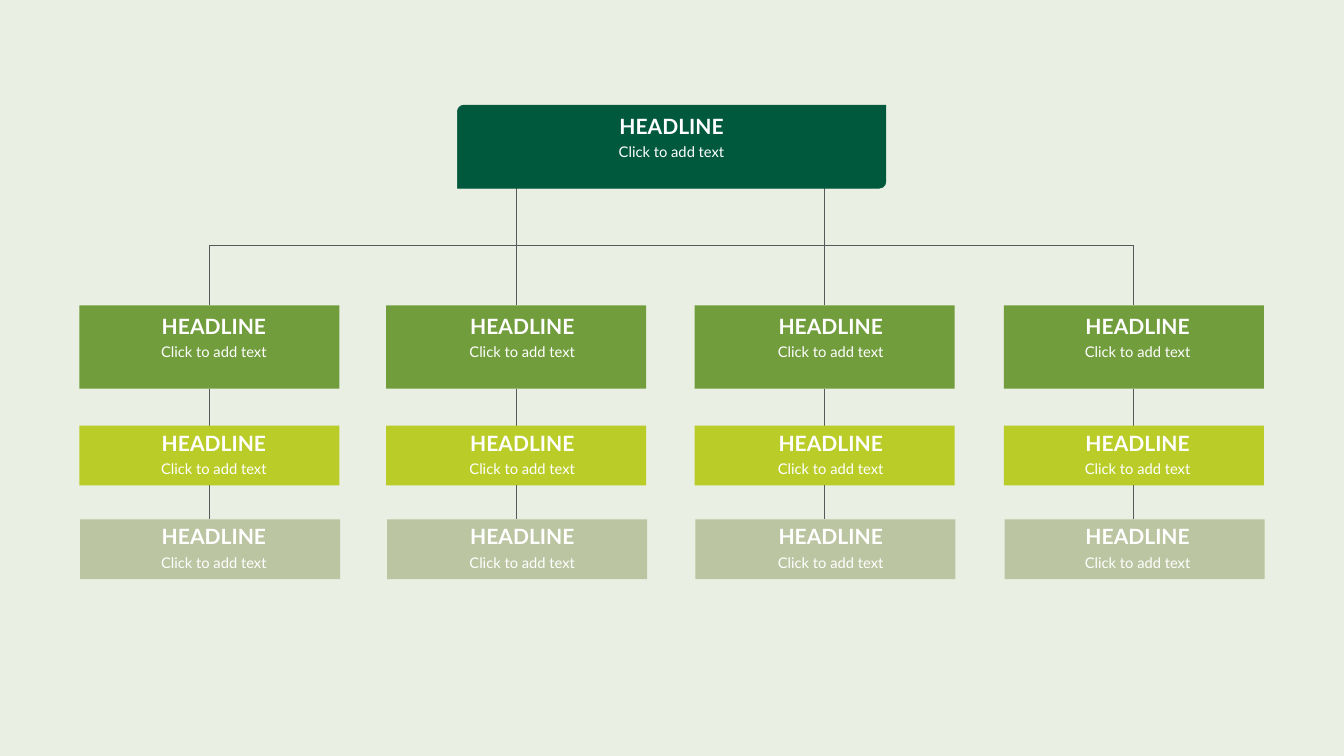
from lxml import etree
from pptx import Presentation
from pptx.dml.color import RGBColor
from pptx.enum import shapes as sh, text as tx
from pptx.oxml import ns
from pptx.util import Inches, Pt

PALE = RGBColor(0xE9, 0xEF, 0xE2)
DARK = RGBColor(0x00, 0x58, 0x3D)
GREEN = RGBColor(0x71, 0x9D, 0x3D)
LIME = RGBColor(0xBA, 0xCC, 0x28)
SAGE = RGBColor(0xBB, 0xC5, 0xA1)
GREY = RGBColor(0x58, 0x59, 0x5B)
WHITE = RGBColor(0xFF, 0xFF, 0xFF)

# left edge of boxes, left edge of headline, top of the line above
COLS = [(1.05, 1.52, 3.25), (5.11, 5.6, 2.42), (9.19, 9.68, 2.42), (13.28, 13.74, 3.25)]
# top, height, shift to the right, gap above headline, colour
ROWS = [(4.04, 1.1, 0, 0.11, GREEN), (5.63, 0.79, 0, 0.06, LIME), (6.87, 0.79, 0.01, 0.06, SAGE)]
WIDTH = 3.44
AXIS = 1.72


def add_line(slide, x1, y1, x2, y2):
    line = slide.shapes.add_connector(
        sh.MSO_CONNECTOR.STRAIGHT, Inches(x1), Inches(y1), Inches(x2), Inches(y2))
    line.line.color.rgb = GREY
    line.line.width = Pt(1.07)
    props = line._element.find(ns.qn("p:spPr"))
    etree.SubElement(props, ns.qn("a:effectLst"))


def add_box(slide, kind, x, y, wide, high, fill):
    box = slide.shapes.add_shape(kind, Inches(x), Inches(y), Inches(wide), Inches(high))
    box.shadow.inherit = False
    box.fill.solid()
    box.fill.fore_color.rgb = fill
    box.line.fill.background()
    return box


def add_text(slide, words, x, y, wide, high, size, bold=False):
    frame = slide.shapes.add_textbox(
        Inches(x), Inches(y), Inches(wide), Inches(high)).text_frame
    frame.word_wrap = True
    frame.margin_left = frame.margin_right = frame.margin_top = frame.margin_bottom = 0
    par = frame.paragraphs[0]
    par.alignment = tx.PP_ALIGN.CENTER
    run = par.add_run()
    run.text = words
    run.font.name = "Lato"
    run.font.size = Pt(size)
    run.font.bold = bold
    run.font.color.rgb = WHITE


def add_label(slide, x, y, wide, side, high):
    add_text(slide, "HEADLINE", x, y, wide, 0.34, 20, True)
    add_text(slide, "Click to add text", x - side, y + 0.39, wide + 2 * side, high, 14)


def add_col(slide, left, head, start):
    mid = left + AXIS
    for top, high, shift, gap, fill in ROWS:
        add_line(slide, mid, start, mid, top)
        add_box(slide, sh.MSO_SHAPE.RECTANGLE, left + shift, top, WIDTH, high, fill)
        add_label(slide, head, top + gap, 2.62, 0.39 if head < 13 else 0.4,
                  0.47 if high > 1 else 0.24)
        start = top + high


def add_root(slide):
    box = add_box(slide, sh.MSO_SHAPE.ROUND_2_DIAG_RECTANGLE, 6.05, 1.39, 5.67, 1.1, DARK)
    box.adjustments[0] = 0.08
    box.line.color.rgb = DARK
    box.line.width = Pt(0.55)
    add_label(slide, 7.05, 1.5, 3.67, 0.45, 0.47)


def main():
    deck = Presentation()
    deck.slide_width, deck.slide_height = Inches(17.78), Inches(10)
    slide = deck.slides.add_slide(deck.slide_layouts[6])
    slide.background.fill.solid()
    slide.background.fill.fore_color.rgb = PALE
    for col in COLS:
        add_col(slide, *col)
    add_line(slide, COLS[0][0] + AXIS, 3.25, COLS[-1][0] + AXIS, 3.25)
    add_root(slide)
    deck.save("out.pptx")


if __name__ == "__main__":
    main()
